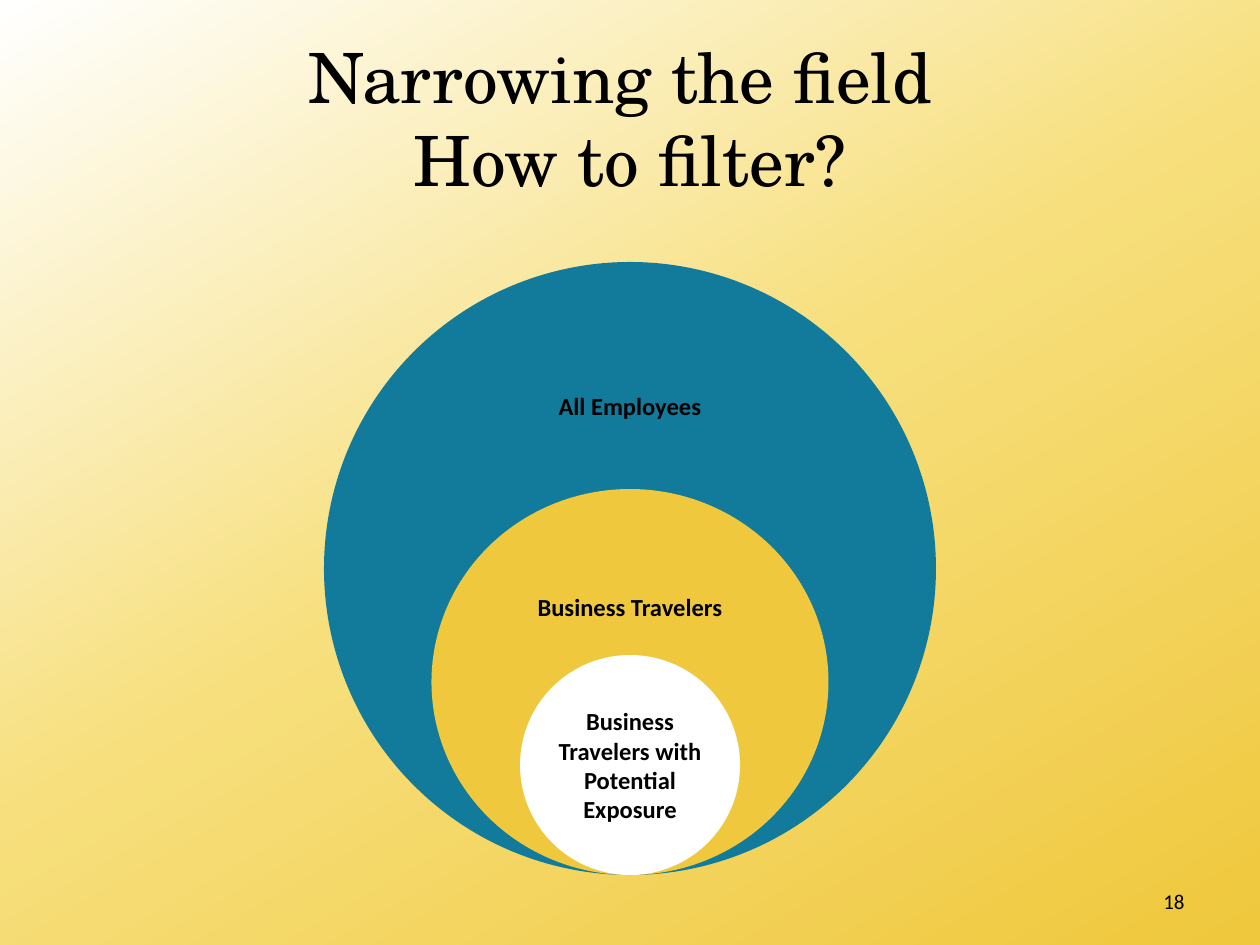
from copy import deepcopy

from pptx import Presentation
from pptx.dml.color import RGBColor
from pptx.enum.shapes import MSO_SHAPE
from pptx.enum.text import MSO_ANCHOR, MSO_AUTO_SIZE, PP_ALIGN
from pptx.oxml.ns import qn
from pptx.util import Inches, Pt

SCALE = Inches(1) / 126
WHITE = RGBColor(0xFF, 0xFF, 0xFF)
BLACK = RGBColor(0x00, 0x00, 0x00)
TEAL = RGBColor(0x12, 0x7B, 0x9B)
GOLD = RGBColor(0xEF, 0xC8, 0x3D)
PALE = RGBColor(0xF7, 0xDF, 0x7D)
SERIF, SANS = "TeX Gyre Schola", "Calibri"


def px(num):
    return round(num * SCALE)


def place(shape, box):
    shape.left, shape.top, shape.width, shape.height = map(px, box)


def write(frame, lines, font, size, align=PP_ALIGN.CENTER, bold=False):
    """Fill the frame with one paragraph, its lines split by breaks."""
    frame.word_wrap = True
    frame.auto_size = MSO_AUTO_SIZE.NONE
    frame.vertical_anchor = MSO_ANCHOR.MIDDLE
    para = frame.paragraphs[0]
    para.alignment = align
    for num, line in enumerate(lines):
        if num:
            para.add_line_break()
        run = para.add_run()
        run.text = line
        run.font.name = font
        run.font.size = Pt(size)
        run.font.bold = bold
        run.font.color.rgb = BLACK


def add_backdrop(slide):
    fill = slide.background.fill
    fill.gradient()
    fill.gradient_angle = 300
    first = next(slide.element.iter(qn("a:gs")))
    first.addnext(deepcopy(first))
    stops = ((0, WHITE), (0.49, PALE), (0.99, GOLD))
    for stop, (pos, color) in zip(fill.gradient_stops, stops):
        stop.position = pos
        stop.color.rgb = color


def add_title(slide, box):
    title = slide.shapes.title
    place(title, box)
    write(title.text_frame, ("Narrowing the field ", "How to filter?"), SERIF, 39.6)


def add_circles(slide, box):
    """Nest circles that share the bottom middle of the box."""
    left, top, width, height = box
    rings = (
        (width, height, TEAL, "All Employees", 326),
        (397, 386, GOLD, "Business Travelers", 150),
        (220, 220, WHITE, "Business Travelers with Potential Exposure", 0),
    )
    for wide, high, color, label, lift in rings:
        ring = slide.shapes.add_shape(MSO_SHAPE.OVAL, 0, 0, 0, 0)
        place(ring, (left + (width - wide) / 2, top + height - high, wide, high))
        ring.shadow.inherit = False
        ring.fill.solid()
        ring.fill.fore_color.rgb = color
        ring.line.fill.background()
        frame = ring.text_frame
        frame.margin_left = frame.margin_right = frame.margin_top = 0
        frame.margin_bottom = px(lift)
        write(frame, (label,), SANS, 14, bold=True)


def add_number(slide, box):
    note = slide.shapes.add_textbox(0, 0, 0, 0)
    place(note, box)
    write(note.text_frame, ("18",), SANS, 12, PP_ALIGN.RIGHT)


def main():
    deck = Presentation()
    deck.slide_width, deck.slide_height = px(1260), px(945)
    slide = deck.slides.add_slide(deck.slide_layouts[5])
    add_backdrop(slide)
    add_title(slide, (63, 38, 1134, 158))
    add_circles(slide, (324, 262, 612, 613))
    add_number(slide, (903, 876, 294, 50))
    deck.save("out.pptx")


if __name__ == "__main__":
    main()
